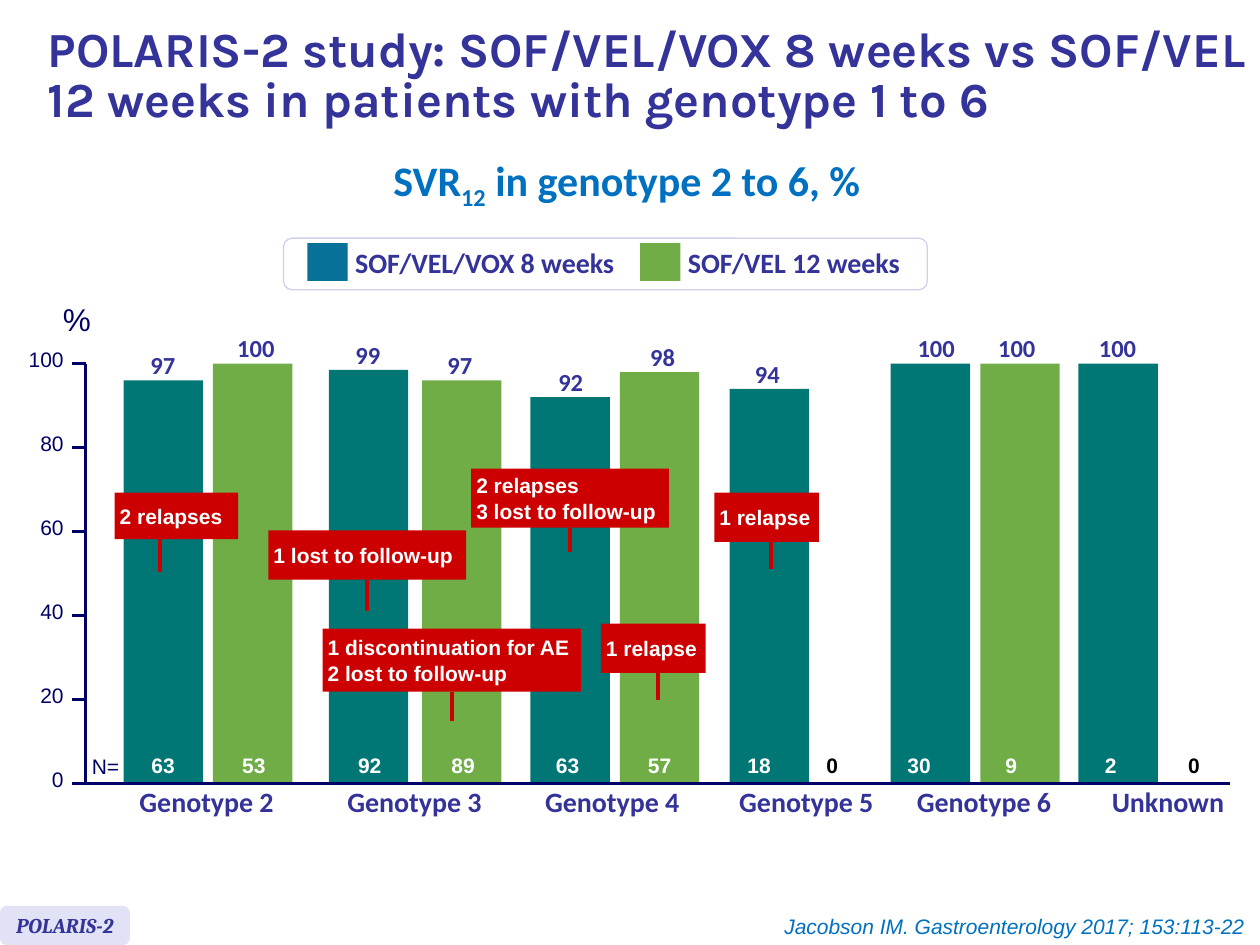
from dataclasses import dataclass

from lxml import etree
from pptx import Presentation
from pptx.dml.color import RGBColor
from pptx.enum.shapes import MSO_CONNECTOR, MSO_SHAPE
from pptx.enum.text import MSO_ANCHOR, MSO_AUTO_SIZE, PP_ALIGN
from pptx.oxml.ns import qn
from pptx.util import Pt

LEFT, CENTER, RIGHT = PP_ALIGN.LEFT, PP_ALIGN.CENTER, PP_ALIGN.RIGHT
RECTANGLE, ROUNDED = MSO_SHAPE.RECTANGLE, MSO_SHAPE.ROUNDED_RECTANGLE
MIDDLE, TOP = MSO_ANCHOR.MIDDLE, MSO_ANCHOR.TOP
FIXED, GROW = MSO_AUTO_SIZE.NONE, MSO_AUTO_SIZE.SHAPE_TO_FIT_TEXT

INDIGO = RGBColor(0x33, 0x33, 0x99)
BLUE = RGBColor(0x00, 0x70, 0xC0)
NAVY = RGBColor(0x00, 0x00, 0x66)
TEAL = RGBColor(0x00, 0x77, 0x74)
GREEN = RGBColor(0x70, 0xAD, 0x47)
LEGEND_TEAL = RGBColor(0x07, 0x71, 0x97)
RED = RGBColor(0xCC, 0x00, 0x00)
LILAC = RGBColor(0xE2, 0xE2, 0xF6)
PALE_LINE = RGBColor(0xD0, 0xD0, 0xF0)
WHITE = RGBColor(0xFF, 0xFF, 0xFF)
BLACK = RGBColor(0x00, 0x00, 0x00)

AXIS_X, AXIS_RIGHT, BASELINE = 49, 702.7, 447.8
TICK_STEP = 48
BAR_WIDTH, PERCENT_HEIGHT = 45.4, 2.4
COUNT_TOP, CATEGORY_TOP = 430.2, 448.6


@dataclass
class Style:
    size: float
    font: str
    color: RGBColor
    bold: bool = False
    italic: bool = False


@dataclass
class Bar:
    left: float
    drawn: float  # height in per cent
    rate: str
    rate_center: float
    count: str
    count_center: float
    color: RGBColor


@dataclass
class Callout:
    left: float
    top: float
    width: float
    height: float
    text: str
    stem_x: float
    stem_end: float


RATE = Style(14, "Calibri", INDIGO, bold=True)
HEADING = Style(16, "Calibri", INDIGO, bold=True)
COUNT = Style(12, "Arial", WHITE, bold=True)
NO_COUNT = Style(12, "Arial", BLACK, bold=True)
AXIS = Style(12, "Arial", NAVY)

BARS = [
    Bar(70.6, 96, "97", 93.1, "63", 93.2, TEAL),
    Bar(121.7, 100, "100", 146.2, "53", 145.1, GREEN),
    Bar(187.9, 98.5, "99", 210.2, "92", 211.3, TEAL),
    Bar(241.2, 96, "97", 262.8, "89", 264.6, GREEN),
    Bar(303.1, 92, "92", 326.2, "63", 324.4, TEAL),
    Bar(354.2, 98, "98", 378.7, "57", 376.9, GREEN),
    Bar(416.9, 94, "94", 438.5, "18", 433.8, TEAL),
    Bar(509, 100, "100", 535, "30", 525.2, TEAL),
    Bar(560.2, 100, "100", 581, "9", 577.8, GREEN),
    Bar(616.3, 100, "100", 638.6, "2", 634.7, TEAL),
]
EMPTY_BAR_CENTERS = [475.6, 682.2]
CATEGORIES = [("Genotype 2", 118.1), ("Genotype 3", 236.9), ("Genotype 4", 349.9),
              ("Genotype 5", 460.8), ("Genotype 6", 562.3), ("Unknown", 667.4)]
CATEGORY_WIDTH = 78
CALLOUTS = [
    Callout(65.5, 281.5, 70.6, 26.6, "2 relapses", 91.4, 326.9),
    Callout(153.4, 303.1, 113, 28.1, "1 lost to follow-up", 209.9, 349.2),
    Callout(184.3, 359.3, 147.6, 36, "1 discontinuation for AE\n2 lost to follow-up", 258.1, 411.8),
    Callout(269.3, 267.8, 113, 33.8, "2 relapses\n3 lost to follow-up", 325.8, 315.4),
    Callout(408.2, 281.5, 59.8, 28.1, "1 relapse", 440.6, 325.4),
    Callout(343.4, 356.4, 59.8, 28.1, "1 relapse", 376.2, 400.3),
]


def format_text(frame, style: Style, align=LEFT, spacing=None) -> None:
    for para in frame.paragraphs:
        para.alignment = align
        if spacing is not None:
            para.line_spacing = spacing
        for span in para.runs:
            span.font.size = Pt(style.size)
            span.font.name = style.font
            span.font.bold = style.bold
            span.font.italic = style.italic
            span.font.color.rgb = style.color


def set_insets(frame, horizontal: float, vertical: float) -> None:
    frame.margin_left = frame.margin_right = Pt(horizontal)
    frame.margin_top = frame.margin_bottom = Pt(vertical)


def add_text(shapes, left: float, top: float, width: float, height: float, text: str,
             style: Style, align=LEFT, spacing=None, inset=True):
    box = shapes.add_textbox(Pt(left), Pt(top), Pt(width), Pt(height))
    frame = box.text_frame
    frame.text = text
    frame.word_wrap = False
    frame.auto_size = GROW
    frame.vertical_anchor = TOP
    if not inset:
        set_insets(frame, 0, 0)
    format_text(frame, style, align, spacing)
    return box


def add_centered(shapes, center: float, top: float, width: float, height: float,
                 text: str, style: Style, spacing=None) -> None:
    add_text(shapes, center - width / 2, top, width, height, text, style, CENTER, spacing, False)


def add_block(shapes, left: float, top: float, width: float, height: float,
              fill: RGBColor, preset=RECTANGLE, line=None):
    block = shapes.add_shape(preset, Pt(left), Pt(top), Pt(width), Pt(height))
    block.shadow.inherit = False
    block.fill.solid()
    block.fill.fore_color.rgb = fill
    if line is None:
        block.line.fill.background()
    else:
        block.line.color.rgb = line
        block.line.width = Pt(0.75)
    return block


def add_line(shapes, x1: float, y1: float, x2: float, y2: float, color: RGBColor, width: float):
    line = shapes.add_connector(MSO_CONNECTOR.STRAIGHT, Pt(x1), Pt(y1), Pt(x2), Pt(y2))
    line.line.color.rgb = color
    line.line.width = Pt(width)
    etree.SubElement(line._element.spPr, qn("a:effectLst"))
    return line


def add_bar(shapes, bar: Bar) -> None:
    height = bar.drawn * PERCENT_HEIGHT
    top = BASELINE - height
    add_block(shapes, bar.left, top, BAR_WIDTH, height, bar.color)
    add_centered(shapes, bar.rate_center, top - 15.6, 8 * len(bar.rate), 15.2,
                 bar.rate, RATE, Pt(15.2))
    add_centered(shapes, bar.count_center, COUNT_TOP, 7 * len(bar.count), 14.4, bar.count, COUNT)


def add_callout(shapes, note: Callout) -> None:
    box = add_block(shapes, note.left, note.top, note.width, note.height, RED)
    frame = box.text_frame
    frame.text = note.text
    frame.word_wrap = False
    frame.vertical_anchor = MIDDLE
    set_insets(frame, 2.9, 7.2)
    format_text(frame, COUNT)
    stem = add_line(shapes, note.stem_x, note.top + note.height, note.stem_x, note.stem_end, RED, 2.25)
    if abs(note.left + note.width / 2 - note.stem_x) < 1:
        stem.begin_connect(box, 2)


def main() -> None:
    deck = Presentation()
    deck.slide_width, deck.slide_height = Pt(720), Pt(540)
    page = deck.slides.add_slide(deck.slide_layouts[5])
    shapes = page.shapes

    # Title and chart heading
    title = shapes.title
    title.left, title.top, title.width, title.height = Pt(20.2), Pt(5.8), Pt(708.5), Pt(77)
    frame = title.text_frame
    frame.text = "POLARIS-2 study: SOF/VEL/VOX 8 weeks vs SOF/VEL 12 weeks in patients with genotype 1 to 6"
    frame.auto_size = FIXED
    frame.vertical_anchor = MIDDLE
    format_text(frame, Style(28, "Karla", INDIGO, bold=True), LEFT, 0.85)

    heading_style = Style(24, "Calibri", BLUE, bold=True)
    heading = add_text(shapes, 215.3, 102.2, 285.8, 25.2, "SVR", heading_style)
    para = heading.text_frame.paragraphs[0]
    subscript = para.add_run()
    subscript.text = "12"
    para.add_run().text = " in genotype 2 to 6, %"
    format_text(heading.text_frame, heading_style, CENTER, Pt(15.2))
    subscript._r.get_or_add_rPr().set("baseline", "-25000")

    # Legend
    legend = shapes.add_group_shape().shapes
    add_block(legend, 162, 136.1, 367.9, 29.5, WHITE, ROUNDED, PALE_LINE)
    for left, width, text, color in [(175.7, 200.9, "SOF/VEL/VOX 8 weeks", LEGEND_TEAL),
                                     (365.8, 137.5, "SOF/VEL 12 weeks", GREEN)]:
        add_block(legend, left, 139, 23, 21.6, color)
        label = add_text(legend, left + 20.2, 131.8, width, 36, text, HEADING).text_frame
        label.word_wrap = True
        label.auto_size = FIXED
        label.vertical_anchor = MIDDLE

    # Value axis
    add_text(shapes, 28.8, 167.8, 31, 28.8, "%", Style(18, "Arial", NAVY))
    add_line(shapes, AXIS_X, BASELINE - 5 * TICK_STEP, AXIS_X, BASELINE, NAVY, 1.5)
    for step in range(6):
        y = BASELINE - step * TICK_STEP
        text = str(step * 20)
        width = 6.7 * len(text)
        add_line(shapes, AXIS_X - 8, y, AXIS_X, y, NAVY, 1.5)
        add_text(shapes, 36.4 - width, y - 10, width, 14.4, text, AXIS, RIGHT, inset=False)

    # Bars, patient counts and categories
    for bar in BARS:
        add_bar(shapes, bar)
    for center in EMPTY_BAR_CENTERS:
        add_centered(shapes, center, COUNT_TOP, 7, 14.4, "0", NO_COUNT)
    add_text(shapes, 45.4, 427, 30.2, 21.6, "N=", AXIS)
    add_line(shapes, AXIS_X, BASELINE, AXIS_RIGHT, BASELINE, NAVY, 1.5)
    for text, center in CATEGORIES:
        add_centered(shapes, center, CATEGORY_TOP, CATEGORY_WIDTH, 19.4, text, HEADING)

    # Reasons for failure
    for note in CALLOUTS:
        add_callout(shapes, note)

    # Study tag and reference
    tag = add_block(shapes, 0, 517.7, 74.2, 22.3, LILAC, ROUNDED)
    tag.text_frame.text = "POLARIS-2"
    tag.text_frame.word_wrap = False
    tag.text_frame.vertical_anchor = MIDDLE
    format_text(tag.text_frame, Style(12, "Cambria", INDIGO, bold=True, italic=True), CENTER)
    add_text(shapes, 434.9, 518.4, 283.7, 21.6, "Jacobson IM. Gastroenterology 2017; 153:113-22",
             Style(12, "Arial", BLUE, italic=True), RIGHT)

    deck.save("out.pptx")


if __name__ == "__main__":
    main()
